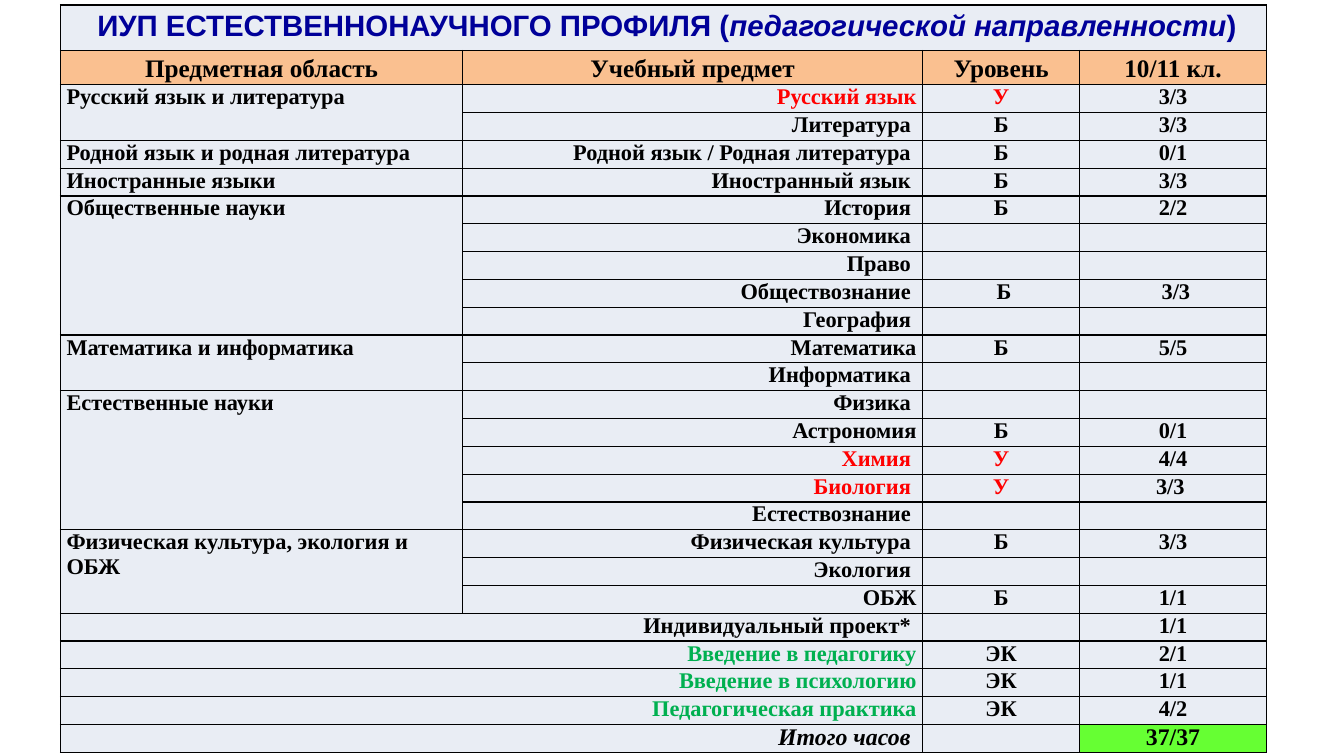
from lxml import etree
from pptx import Presentation
from pptx.dml.color import RGBColor
from pptx.enum.text import PP_ALIGN
from pptx.oxml.ns import qn
from pptx.util import Inches, Pt

LEFT, CENTER, RIGHT = PP_ALIGN.LEFT, PP_ALIGN.CENTER, PP_ALIGN.RIGHT
BLACK = RGBColor(0x00, 0x00, 0x00)
NAVY = RGBColor(0x00, 0x00, 0x99)
RED = RGBColor(0xFF, 0x00, 0x00)
GREEN = RGBColor(0x00, 0xB0, 0x50)
PALE_BLUE = RGBColor(0xE9, 0xED, 0xF4)
PEACH = RGBColor(0xFA, 0xC0, 0x90)
LIME = RGBColor(0x66, 0xFF, 0x33)

TITLE_SPANS = [
    (" ", 18, False),
    ("ИУП ЕСТЕСТВЕННОНАУЧНОГО ПРОФИЛЯ (", 21, False),
    ("педагогической направленности", 21, True),
    (")", 21, False),
]
HEADINGS = ["Предметная область", "Учебный предмет", "Уровень", "10/11 кл."]
AREAS = [
    ("Русский язык и литература", [
        ("Русский язык", "У", "3/3"),
        ("Литература ", "Б", "3/3"),
    ]),
    ("Родной язык и родная литература", [
        ("Родной язык / Родная литература ", "Б", "0/1"),
    ]),
    ("Иностранные языки", [
        ("Иностранный язык ", "Б", "3/3"),
    ]),
    ("Общественные науки", [
        ("История ", "Б", "2/2"),
        ("Экономика ", "", ""),
        ("Право ", "", ""),
        ("Обществознание ", " Б", " 3/3"),
        ("География ", "", ""),
    ]),
    ("Математика и информатика", [
        ("Математика", "Б", "5/5"),
        ("Информатика ", "", ""),
    ]),
    ("Естественные науки", [
        ("Физика ", "", ""),
        ("Астрономия", "Б", "0/1"),
        ("Химия ", "У", "4/4"),
        ("Биология ", "У", "3/3 "),
        ("Естествознание ", "", ""),
    ]),
    ("Физическая культура, экология и ОБЖ", [
        ("Физическая культура ", "Б", "3/3"),
        ("Экология ", "", ""),
        ("ОБЖ", "Б", "1/1"),
    ]),
]
EXTRAS = [
    ("Индивидуальный проект* ", "", "1/1"),
    ("Введение в педагогику", "ЭК", "2/1"),
    ("Введение в психологию", "ЭК", "1/1"),
    ("Педагогическая практика", "ЭК", "4/2"),
    ("Итого часов ", "", "37/37"),
]
SUBJECT_COLORS = {"У": RED, "ЭК": GREEN}
LEVEL_COLORS = {"У": RED}
COLUMN_WIDTHS = [3.99, 4.56, 1.56, 1.85]
TITLE_HEIGHT, HEADING_HEIGHT, TABLE_HEIGHT = 0.45, 0.34, 7.42
SUBJECT_COUNT = sum(len(subjects) for area, subjects in AREAS) + len(EXTRAS)
SUBJECT_HEIGHT = (TABLE_HEIGHT - TITLE_HEIGHT - HEADING_HEIGHT) / SUBJECT_COUNT


def style_span(span, size, color, font_name="Times New Roman", italic=False):
    span.font.name = font_name
    span.font.size = Pt(size)
    span.font.bold = True
    span.font.italic = italic
    span.font.color.rgb = color


def write_cell(cell, text, align, color=BLACK, size=16, italic=False):
    para = cell.text_frame.paragraphs[0]
    para.alignment = align
    if text:
        para.text = text
        style_span(para.runs[0], size, color, italic=italic)


deck = Presentation()
deck.slide_width = Inches(13.33)
deck.slide_height = Inches(7.5)
page = deck.slides.add_slide(deck.slide_layouts[6])
plan = page.shapes.add_table(
    SUBJECT_COUNT + 2, len(COLUMN_WIDTHS),
    Inches(0.6), Inches(0.05), Inches(11.97), Inches(TABLE_HEIGHT),
).table
plan.first_row = False
plan.horz_banding = False

for column, width in zip(plan.columns, COLUMN_WIDTHS):
    column.width = Inches(width)
row_heights = [TITLE_HEIGHT, HEADING_HEIGHT] + [SUBJECT_HEIGHT] * SUBJECT_COUNT
for row, height in zip(plan.rows, row_heights):
    row.height = Inches(height)
    for cell in row.cells:
        cell.margin_left = cell.margin_right = Inches(0.06)
        cell.margin_top = cell.margin_bottom = 0
        properties = cell._tc.get_or_add_tcPr()
        for side in ("a:lnL", "a:lnR", "a:lnT", "a:lnB"):
            border = etree.SubElement(properties, qn(side), w=str(Pt(1)))
            solid = etree.SubElement(border, qn("a:solidFill"))
            etree.SubElement(solid, qn("a:srgbClr"), val=str(BLACK))
        cell.fill.solid()
        cell.fill.fore_color.rgb = PALE_BLUE
        empty_para = cell.text_frame.paragraphs[0]._p
        etree.SubElement(empty_para, qn("a:endParaRPr"), sz="1600")

plan.cell(0, 0).merge(plan.cell(0, 3))
title_para = plan.cell(0, 0).text_frame.paragraphs[0]
title_para.alignment = CENTER
title_para.line_spacing = 1.15
for text, size, italic in TITLE_SPANS:
    span = title_para.add_run()
    span.text = text
    style_span(span, size, NAVY, "Arial", italic)

for column_index, heading in enumerate(HEADINGS):
    cell = plan.cell(1, column_index)
    write_cell(cell, heading, CENTER, size=18)
    cell.text_frame.paragraphs[0].line_spacing = 1.15
    cell.fill.fore_color.rgb = PEACH

row_index = 2
for area, subjects in AREAS:
    area_cell = plan.cell(row_index, 0)
    if len(subjects) > 1:
        area_cell.merge(plan.cell(row_index + len(subjects) - 1, 0))
    write_cell(area_cell, area, LEFT)
    for subject, level, hours in subjects:
        write_cell(plan.cell(row_index, 1), subject, RIGHT, SUBJECT_COLORS.get(level, BLACK))
        write_cell(plan.cell(row_index, 2), level, CENTER, LEVEL_COLORS.get(level, BLACK))
        write_cell(plan.cell(row_index, 3), hours, CENTER)
        row_index += 1

for subject, level, hours in EXTRAS:
    is_total = subject == EXTRAS[-1][0]
    size = 17 if is_total else 16
    subject_cell = plan.cell(row_index, 0)
    subject_cell.merge(plan.cell(row_index, 1))
    write_cell(subject_cell, subject, RIGHT, SUBJECT_COLORS.get(level, BLACK), size, is_total)
    write_cell(plan.cell(row_index, 2), level, CENTER)
    write_cell(plan.cell(row_index, 3), hours, CENTER, size=size)
    if is_total:
        plan.cell(row_index, 3).fill.fore_color.rgb = LIME
    row_index += 1

deck.save("out.pptx")
